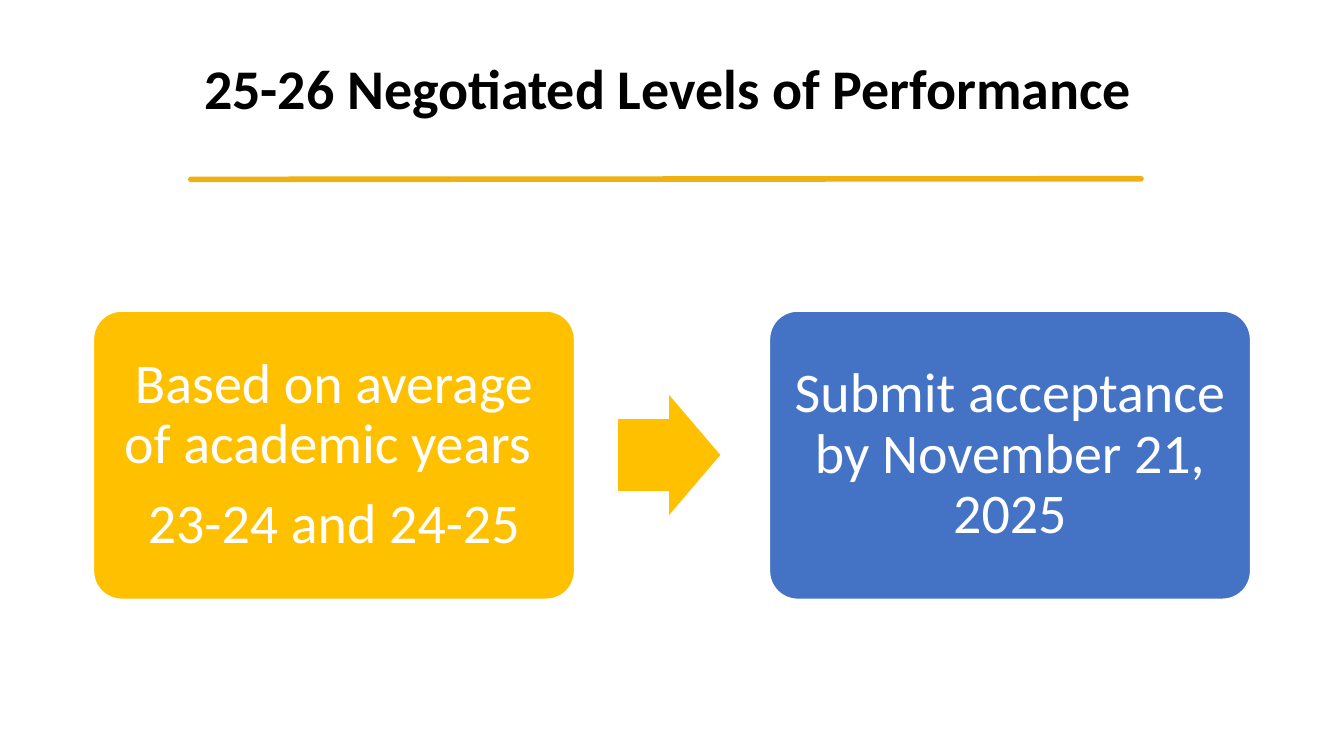
from lxml import etree
from pptx import Presentation
from pptx import util as u
from pptx.dml.color import RGBColor
from pptx.enum import shapes, text
from pptx.oxml.ns import qn

SCALE = u.Inches(1) // 200
COLORS = {
    "ink": "000000",
    "white": "FFFFFF",
    "rule": "EEB111",
    "gold": "FFC000",
    "blue": "4472C4",
}
FONT = {"name": "Calibri", "size": u.Pt(30)}
STEP_W, STEP_H = 718, 431
ARROW_W, ARROW_H = 152, 178


def px(*lengths):
    """Turn px lengths into EMU."""
    return [u.Emu(length * SCALE) for length in lengths]


def color(name):
    """Return the named colour."""
    return RGBColor.from_string(COLORS[name])


def apply(target, formats):
    """Set every attribute in formats on target."""
    for key, value in formats.items():
        setattr(target, key, value)


def write(frame, lines, ink, align, inset, bold=False):
    """Fill a text frame with one paragraph per line."""
    margins = ("margin_left", "margin_top", "margin_right", "margin_bottom")
    apply(frame, dict(zip(margins, px(*inset))))
    apply(frame, {"word_wrap": True, "vertical_anchor": text.MSO_ANCHOR.MIDDLE})
    for index, line in enumerate(lines):
        paragraph = frame.add_paragraph() if index else frame.paragraphs[0]
        apply(paragraph, {"alignment": align, "line_spacing": 0.9})
        if index:
            paragraph.space_before = u.Pt(10.5)
        run = paragraph.add_run()
        run.text = line
        apply(run.font, {**FONT, "bold": bold})
        run.font.color.rgb = color(ink)


def add_heading(slide, left, top, width, height, title):
    """Place the title and the rule under it."""
    rule = slide.shapes.add_connector(
        shapes.MSO_CONNECTOR.STRAIGHT,
        *px(left, top + 240, left + 1414, top + 239))
    rule.line.color.rgb = color("rule")
    rule.line.width = u.Pt(3)
    properties = rule._element.spPr
    properties.find(qn("a:ln")).set("cap", "rnd")
    etree.SubElement(properties, qn("a:effectLst"))
    heading = slide.shapes.add_textbox(*px(left, top, width, height))
    write(heading.text_frame, [title], "ink", text.PP_ALIGN.LEFT,
          (20, 10, 20, 10), bold=True)


def add_block(slide, kind, box, fill, adjustments):
    """Place a plain filled shape."""
    block = slide.shapes.add_shape(kind, *px(*box))
    block.shadow.inherit = False
    block.fill.solid()
    block.fill.fore_color.rgb = color(fill)
    block.line.fill.background()
    for index, value in enumerate(adjustments):
        block.adjustments[index] = value
    return block


def add_step(slide, left, top, fill, lines):
    """Place a rounded step card with its wording."""
    card = add_block(slide, shapes.MSO_SHAPE.ROUNDED_RECTANGLE,
                     (left, top, STEP_W, STEP_H), fill, [0.1])
    card.line.color.rgb = color("white")
    card.line.width = u.Pt(1.5)
    write(card.text_frame, lines, "white", text.PP_ALIGN.CENTER, (24,) * 4)


def add_process(slide, left, top, pitch, steps):
    """Place the steps in a row with an arrow between neighbours."""
    for index, (fill, lines) in enumerate(steps):
        step_left = left + index * pitch
        if index:
            arrow_left = step_left - pitch + STEP_W + 64
            arrow_top = top + (STEP_H - ARROW_H) // 2
            add_block(slide, shapes.MSO_SHAPE.RIGHT_ARROW,
                      (arrow_left, arrow_top, ARROW_W, ARROW_H),
                      "gold", [0.6, 0.5])
        add_step(slide, step_left, top, fill, lines)


def main():
    """Build and save the slide."""
    deck = Presentation()
    deck.slide_width, deck.slide_height = px(2000, 1125)
    slide = deck.slides.add_slide(deck.slide_layouts[6])
    add_heading(slide, 284, 27, 1610, 218, "25-26 Negotiated Levels of Performance")
    add_process(slide, 138, 462, 1006, [
        ("gold", ["Based on average of academic years ", "23-24 and 24-25"]),
        ("blue", ["Submit acceptance by November 21, 2025"]),
    ])
    deck.save("out.pptx")


if __name__ == "__main__":
    main()
